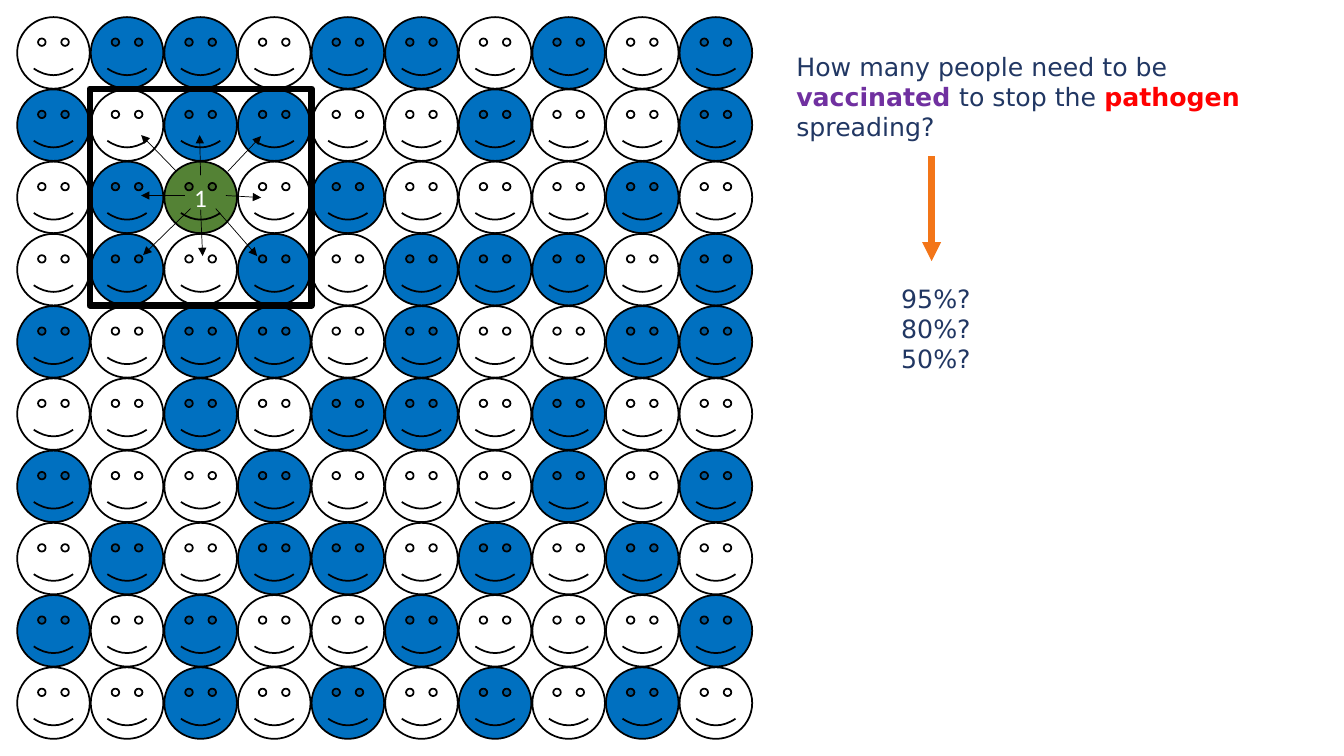
from pptx import Presentation, util as u
from pptx.dml.color import RGBColor
from pptx.enum import shapes as sh, text as tx
from pptx.oxml.ns import qn
from lxml import etree

PX = 9144
BLUE, GREEN, BLACK, WHITE, NAVY = "0070C0", "548235", "000000", "FFFFFF", "213763"
FILLS = {"b": BLUE, "g": GREEN, ".": None}
CROWD = """
.bb.bb.b.b
b.bb..b..b
.bg.b...b.
.b.b.bbb.b
b.bb.b..bb
..b.bb.b..
b..b...b.b
.b.bb.b.b.
b.b..b...b
..b.b.b.b.
""".split()
RAYS = [
    (0, -21, -1, -61), (27, -25, 60, -60), (25, -1, 60, 1), (-16, -1, -59, -1),
    (-10, 12, -57, 58), (0, 13, 2, 59), (-24, -25, -59, -61), (15, 12, 56, 59),
]


def px(*vals):
    """Turn pixel lengths into EMU."""
    return [round(v * PX) for v in vals]


def color(code):
    """Turn a hex string into a colour."""
    return RGBColor.from_string(code)


def shape(parts, kind, box, fill=None, line=None, width=1.25):
    """Add a preset shape with a plain fill and outline."""
    item = parts.add_shape(kind, *px(*box))
    item.shadow.inherit = False
    if fill:
        item.fill.solid()
        item.fill.fore_color.rgb = color(fill)
    else:
        item.fill.background()
    if line:
        item.line.color.rgb = color(line)
        item.line.width = u.Pt(width)
    else:
        item.line.fill.background()
    return item


def arrow(parts, ends, line, width):
    """Add a straight line with a triangular head at its end."""
    item = parts.add_connector(sh.MSO_CONNECTOR.STRAIGHT, *px(*ends))
    item.line.color.rgb = color(line)
    item.line.width = u.Pt(width)
    etree.SubElement(item.line._get_or_add_ln(), qn("a:tailEnd"), type="triangle")
    etree.SubElement(item._element.spPr, qn("a:effectLst"))


def write(para, words, size=18, font="DejaVu Sans", ink=NAVY, bold=False):
    """Add a formatted run to a paragraph."""
    run = para.add_run()
    run.text = words
    run.font.size = u.Pt(size)
    run.font.name = font
    run.font.color.rgb = color(ink)
    run.font.bold = bold


def note(parts, box, paras):
    """Fill a white box with paragraphs of (words, format) runs."""
    frame = shape(parts, sh.MSO_SHAPE.RECTANGLE, box, WHITE).text_frame
    frame.word_wrap = True
    frame.auto_size = tx.MSO_AUTO_SIZE.SHAPE_TO_FIT_TEXT
    frame.vertical_anchor = tx.MSO_ANCHOR.TOP
    for i, runs in enumerate(paras):
        para = frame.add_paragraph() if i else frame.paragraphs[0]
        para.alignment = tx.PP_ALIGN.LEFT
        for words, look in runs:
            write(para, words, **look)


def crowd(parts, left, top, wide, high):
    """Spread the rows of faces evenly over the box."""
    size, tall = 72, 71
    across = (wide - size) / (len(CROWD[0]) - 1)
    down = (high - tall) / (len(CROWD) - 1)
    for r, row in enumerate(CROWD):
        for c, mark in enumerate(row):
            box = left + c * across, top + r * down, size, tall
            face = shape(parts, sh.MSO_SHAPE.SMILEY_FACE, box, FILLS[mark], BLACK)
            if mark == "g":
                face.text_frame.vertical_anchor = tx.MSO_ANCHOR.MIDDLE
                para = face.text_frame.paragraphs[0]
                para.alignment = tx.PP_ALIGN.CENTER
                write(para, "1", font="Calibri", ink=WHITE)


def spread(parts, left, top, wide, high):
    """Frame the first case and its neighbours, with arrows outwards."""
    x, y = left + wide // 2, top + high // 2
    for x1, y1, x2, y2 in RAYS:
        arrow(parts, (x + x1, y + y1, x + x2, y + y2), BLACK, 0.5)
    shape(parts, sh.MSO_SHAPE.RECTANGLE, (left, top, wide, high), None, BLACK, 4.5)


def question(parts, left, top, wide, high):
    """Place the question, the arrow and the possible answers."""
    answers = [[(words, {})] for words in ("95%?", "80%?", "50%?")]
    note(parts, (left + 104, top + high - 101, 240, 101), answers)
    note(parts, (left, top, wide, 101), [[
        ("How many people need to be ", {}),
        ("vaccinated ", {"ink": "7030A0", "bold": True}),
        ("to stop the ", {}),
        ("pathogen ", {"ink": "FF0000", "bold": True}),
        ("spreading?", {}),
    ]])
    arrow(parts, (left + 144, top + 109, left + 144, top + 213), "F37518", 4.5)


def main():
    """Build and save the slide."""
    deck = Presentation()
    deck.slide_width, deck.slide_height = px(1333, 750)
    parts = deck.slides.add_slide(deck.slide_layouts[6]).shapes
    question(parts, 780, 46, 524, 331)
    crowd(parts.add_group_shape().shapes, 17, 17, 729, 716)
    spread(parts.add_group_shape().shapes, 89, 88, 220, 215)
    deck.save("out.pptx")


if __name__ == "__main__":
    main()
